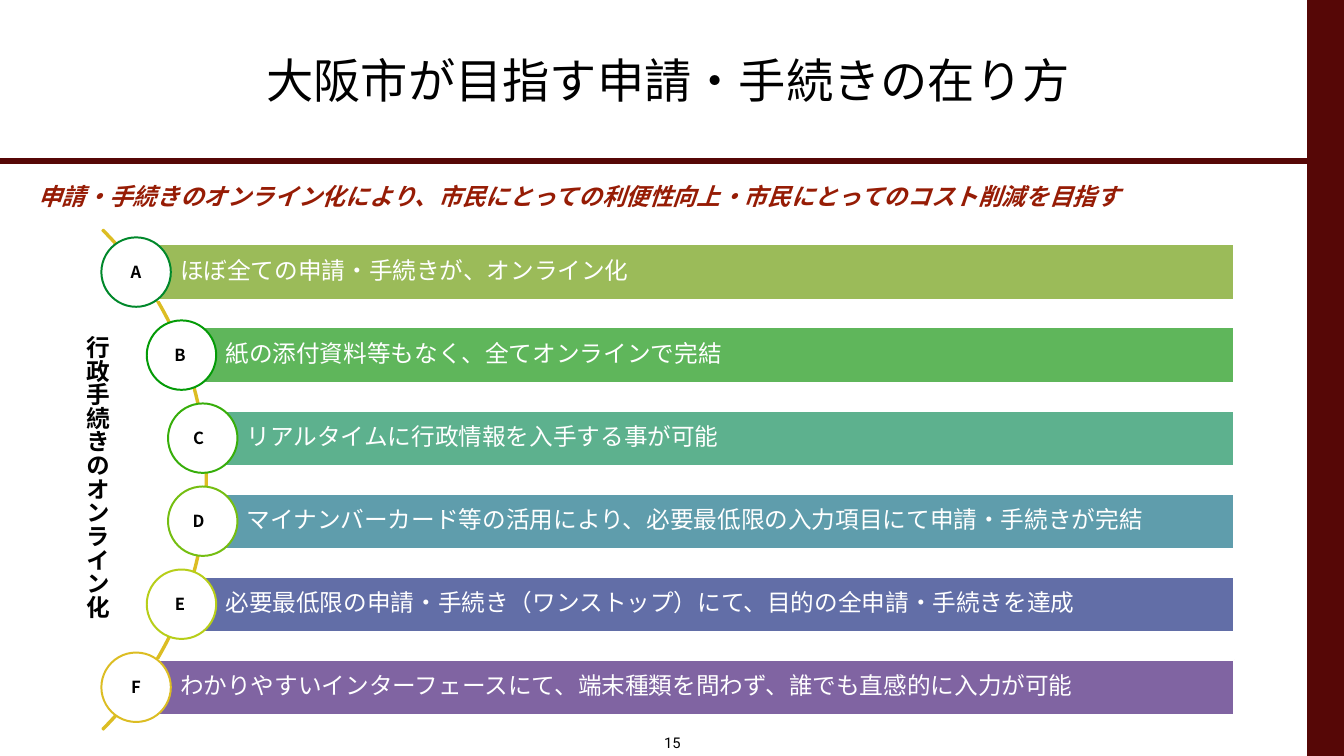
from pptx import Presentation
from pptx.dml.color import RGBColor
from pptx.enum.shapes import MSO_CONNECTOR, MSO_SHAPE
from pptx.enum.text import MSO_ANCHOR, PP_ALIGN
from pptx.oxml.xmlchemy import OxmlElement
from pptx.util import Inches, Pt

RECT, OVAL, ARC = MSO_SHAPE.RECTANGLE, MSO_SHAPE.OVAL, MSO_SHAPE.BLOCK_ARC
STRAIGHT = MSO_CONNECTOR.STRAIGHT
TOP, MIDDLE = MSO_ANCHOR.TOP, MSO_ANCHOR.MIDDLE
LEFT, CENTER = PP_ALIGN.LEFT, PP_ALIGN.CENTER

ROWS = [
    ("A", "ほぼ全ての申請・手続きが、オンライン化", "9BBB59", "00882B"),
    ("B", "紙の添付資料等もなく、全てオンラインで完結", "5FB65B", "049B07"),
    ("C", "リアルタイムに行政情報を入手する事が可能", "5DB18E", "37AE0A"),
    ("D", "マイナンバーカード等の活用により、必要最低限の入力項目にて申請・手続きが完結",
     "5F9DAC", "75BE11"),
    ("E", "必要最低限の申請・手続き（ワンストップ）にて、目的の全申請・手続きを達成",
     "626EA7", "B7CE19"),
    ("F", "わかりやすいインターフェースにて、端末種類を問わず、誰でも直感的に入力が可能",
     "8064A2", "DCBD23"),
]
BAR_LEFTS = [1.92, 2.56, 2.86]
LETTER_SHIFTS = [0, 0.02, 0.06]
BAR_TOP, BAR_RIGHT, BAR_H = 3.45, 17.41, 0.78
PITCH = (9.31 - BAR_TOP) / (len(ROWS) - 1)
CIRCLE = 0.98


def rgb(color):
    return RGBColor.from_string(color)


def write(tf, text, size=24, font="Noto Sans CJK JP", color="000000", bold=False,
          italic=False, align=LEFT, anchor=TOP, wrap=True, spacing=None,
          insets=(0.06, 0.06, 0.06, 0.06)):
    tf.word_wrap, tf.vertical_anchor = wrap, anchor
    tf.margin_left, tf.margin_top, tf.margin_right, tf.margin_bottom = map(Inches, insets)
    p = tf.paragraphs[0]
    p.alignment = align
    if spacing:
        p.line_spacing = spacing
    r = p.add_run()
    r.text = text
    r.font.size, r.font.name = Pt(size), font
    r.font.bold, r.font.italic = bold, italic
    r.font.color.rgb = rgb(color)
    ea = OxmlElement("a:ea")
    ea.set("typeface", font)
    r.font._element.append(ea)


class Deck:
    """Holds the house colour, the presentation and the current slide."""

    dark = "560706"

    def __init__(self, width, height):
        self.prs = Presentation()
        self.prs.slide_width, self.prs.slide_height = Inches(width), Inches(height)
        self.s = self.prs.slides.add_slide(self.prs.slide_layouts[5])

    def title(self, box, text, **fmt):
        sp = self.s.shapes.title
        sp.left, sp.top, sp.width, sp.height = map(Inches, box)
        write(sp.text_frame, text, **fmt)

    def shape(self, kind, box, fill=None, line=None, width=2):
        sp = self.s.shapes.add_shape(kind, *map(Inches, box))
        sp.shadow.inherit = False
        if fill:
            sp.fill.solid()
            sp.fill.fore_color.rgb = rgb(fill)
        else:
            sp.fill.background()
        if line:
            sp.line.color.rgb = rgb(line)
            sp.line.width = Pt(width)
        else:
            sp.line.fill.background()
        return sp

    def text(self, box, text, vertical=False, **fmt):
        sp = self.s.shapes.add_textbox(*map(Inches, box))
        write(sp.text_frame, text, **fmt)
        if vertical:
            sp.element.txBody.bodyPr.set("vert", "eaVert")

    def rule(self, x1, y1, x2, y2, color, width):
        c = self.s.shapes.add_connector(STRAIGHT, *map(Inches, (x1, y1, x2, y2)))
        c.line.color.rgb = rgb(color)
        c.line.width = Pt(width)
        c.element.spPr.append(OxmlElement("a:effectLst"))


def main():
    deck = Deck(18.96, 10.67)
    deck.shape(RECT, (18.44, 0, 0.52, 10.67), fill=deck.dark)
    deck.rule(0, 2.27, 18.44, 2.27, deck.dark, 6)
    deck.title((1.33, -0.06, 16.19, 2.36), "大阪市が目指す申請・手続きの在り方",
               size=48, align=CENTER, anchor=MIDDLE)

    arc = deck.shape(ARC, (-7.06, 1.78, 9.98, 9.98), line="DCBD23")
    for i, value in enumerate((189, 27, 0.002)):
        arc.adjustments[i] = value

    for i, (letter, text, fill, ring) in enumerate(ROWS):
        step = min(i, len(ROWS) - 1 - i)
        left, top = BAR_LEFTS[step], BAR_TOP + i * PITCH
        bar = deck.shape(RECT, (left, top, BAR_RIGHT - left, BAR_H), fill, "FFFFFF")
        write(bar.text_frame, text, font="Calibri", color="FFFFFF", anchor=MIDDLE,
              spacing=0.9, insets=(0.62, 0.07, 0.07, 0.07))
        circle = deck.shape(OVAL, (left - CIRCLE / 2, top + (BAR_H - CIRCLE) / 2,
                                   CIRCLE, CIRCLE), "FFFFFF", ring)
        write(circle.text_frame, letter, size=16.9, bold=True, align=CENTER,
              anchor=MIDDLE, insets=(0, 0, 2 * LETTER_SHIFTS[step], 0))

    deck.text((1.02, 4.64, 0.61, 4.31), "行政手続きのオンライン化", vertical=True,
              bold=True, align=CENTER, insets=(0.1, 0.05, 0.1, 0.05))
    deck.text((0.48, 2.51, 15.6, 0.52),
              "申請・手続きのオンライン化により、市民にとっての利便性向上・市民にとってのコスト削減を目指す",
              color="961C05", bold=True, italic=True, anchor=MIDDLE, wrap=False)
    deck.text((9.27, 10.3, 0.43, 0.36), "15", size=15, font="Roboto",
              align=CENTER, wrap=False)
    deck.prs.save("out.pptx")


if __name__ == "__main__":
    main()
